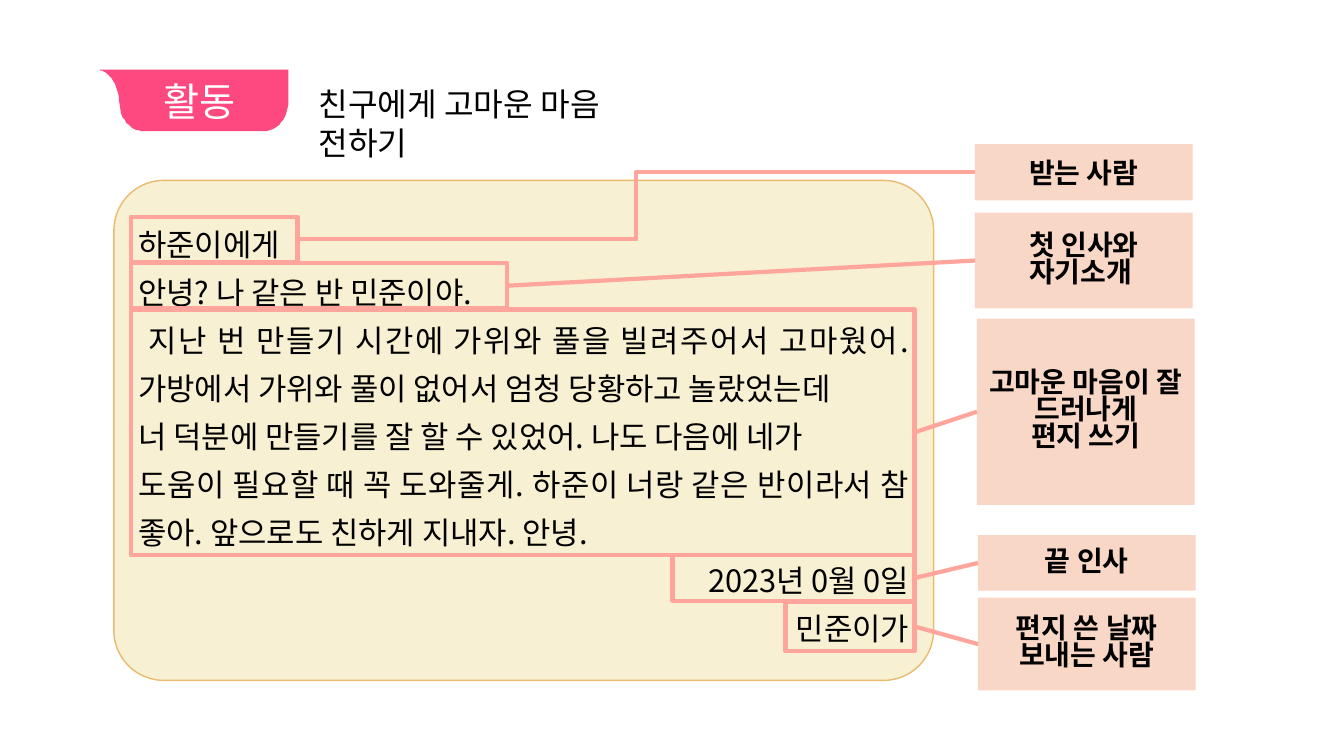
from lxml import etree
from pptx import Presentation
from pptx.dml.color import RGBColor
from pptx.enum.shapes import MSO_CONNECTOR as LINK, MSO_SHAPE as SHAPE
from pptx.enum.text import MSO_ANCHOR as ANCHOR, PP_ALIGN as ALIGN
from pptx.oxml.ns import qn
from pptx.util import Pt

PX = 9144  # 100 px to the inch
PINK = RGBColor(0xFD, 0x48, 0x80)
CREAM = RGBColor(0xF8, 0xF0, 0xD2)
GOLD = RGBColor(0xEB, 0xBA, 0x6F)
PEACH = RGBColor(0xF8, 0xD7, 0xC6)
CORAL = RGBColor(0xFF, 0xA5, 0x9B)
WHITE = RGBColor(0xFF, 0xFF, 0xFF)
BLACK = RGBColor(0, 0, 0)
KOREAN = "Noto Sans CJK KR"
LATIN = "Calibri"

LETTER = [
    ("하준이에게", ALIGN.JUSTIFY),
    ("안녕? 나 같은 반 민준이야. ", ALIGN.JUSTIFY),
    (" 지난 번 만들기 시간에 가위와 풀을 빌려주어서 고마웠어. "
     "가방에서 가위와 풀이 없어서 엄청 당황하고 놀랐었는데", ALIGN.JUSTIFY),
    ("너 덕분에 만들기를 잘 할 수 있었어. 나도 다음에 네가", ALIGN.JUSTIFY),
    ("도움이 필요할 때 꼭 도와줄게. 하준이 너랑 같은 반이라서 "
     "참 좋아. 앞으로도 친하게 지내자. 안녕.", ALIGN.JUSTIFY),
    ("2023년 0월 0일", ALIGN.RIGHT),
    ("민준이가", ALIGN.RIGHT),
]

# Label paragraphs, line spacing, label box, frame around the letter part, link
PARTS = [
    (["받는 사람"], 1.0, (967, 143, 216, 56), (130, 215, 165, 45), LINK.ELBOW),
    (["첫 인사와\n자기소개 "], 0.8, (967, 211, 216, 95), (130, 261, 373, 45),
     LINK.STRAIGHT),
    (["고마운 마음이 잘 드러나게", "편지 쓰기"], 0.8, (969, 316, 216, 185),
     (130, 307, 777, 244), LINK.STRAIGHT),
    (["끝 인사"], 0.8, (970, 531, 216, 55), (667, 551, 240, 45), LINK.STRAIGHT),
    (["편지 쓴 날짜", "보내는 사람"], 0.8, (970, 593, 216, 92),
     (779, 597, 128, 49), LINK.STRAIGHT),
]


def emu(lengths):
    return [round(length * PX) for length in lengths]


def write(frame, paragraphs, size, font, color=BLACK, bold=False, spacing=None):
    """Fill a text frame with (text, alignment) paragraphs."""
    frame.word_wrap = True
    for index, (text, align) in enumerate(paragraphs):
        para = frame.paragraphs[0] if index == 0 else frame.add_paragraph()
        para.alignment = align
        para.line_spacing = spacing
        for number, line in enumerate(text.split("\n")):
            if number:
                para.add_line_break()
            run = para.add_run()
            run.text = line
            run.font.name = font
            run.font.size = Pt(size)
            run.font.bold = bold
            run.font.color.rgb = color


def add_box(slide, kind, box, fill=None, line=None, width=1):
    shape = slide.shapes.add_shape(kind, *emu(box))
    shape.shadow.inherit = False
    if fill is None:
        shape.fill.background()
    else:
        shape.fill.solid()
        shape.fill.fore_color.rgb = fill
    if line is None:
        shape.line.fill.background()
    else:
        shape.line.color.rgb = line
        shape.line.width = Pt(width)
    shape.text_frame.vertical_anchor = ANCHOR.MIDDLE
    return shape


def add_link(slide, kind, frame, label):
    """Join the right side of a frame to the left side of its label."""
    ends = (frame.left + frame.width, frame.top + frame.height // 2,
            label.left, label.top + label.height // 2)
    link = slide.shapes.add_connector(kind, *ends)
    link.begin_connect(frame, 3)
    link.end_connect(label, 1)
    link.line.color.rgb = CORAL
    link.line.width = Pt(3)
    etree.SubElement(link._element.spPr, qn("a:effectLst"))


def curve(start, first, second, end, steps=12):
    """Points of a cubic curve, without its start."""
    for step in range(1, steps + 1):
        t = step / steps
        u = 1 - t
        yield tuple(u**3 * a + 3 * u * u * t * b + 3 * u * t * t * c + t**3 * d
                    for a, b, c, d in zip(start, first, second, end))


def add_ribbon(slide):
    points = [(286, 69), (286, 100),
              *curve((286, 100), (286, 117), (275, 130), (262, 130)),
              (142, 130),
              *curve((142, 130), (132, 130), (124, 123), (120, 112)),
              (118, 99),
              *curve((118, 99), (117, 85), (110, 73), (101, 70)),
              (99, 70)]
    outline = slide.shapes.build_freeform(99, 69, scale=PX)
    outline.add_line_segments(points, close=True)
    ribbon = outline.convert_to_shape()
    ribbon.shadow.inherit = False
    ribbon.fill.solid()
    ribbon.fill.fore_color.rgb = PINK
    ribbon.line.fill.background()

    caption = slide.shapes.add_textbox(*emu((138, 72, 120, 57)))
    write(caption.text_frame, [("활동", ALIGN.CENTER)], 28, LATIN, WHITE)


def add_title(slide):
    title = slide.shapes.title
    title.left, title.top, title.width, title.height = emu((306, 79, 390, 49))
    title.text_frame.vertical_anchor = ANCHOR.TOP
    write(title.text_frame, [("친구에게 고마운 마음 전하기", ALIGN.LEFT)], 23, LATIN)


def add_letter(slide):
    letter = add_box(slide, SHAPE.ROUNDED_RECTANGLE, (113, 179, 813, 496),
                     CREAM, GOLD)
    letter.adjustments[0] = 0.1
    write(letter.text_frame, LETTER, 22, KOREAN, spacing=1.3)


def add_part(slide, paragraphs, spacing, label_box, frame_box, kind):
    label = add_box(slide, SHAPE.RECTANGLE, label_box, PEACH)
    write(label.text_frame, [(text, ALIGN.CENTER) for text in paragraphs],
          20, KOREAN, bold=True, spacing=spacing)
    frame = add_box(slide, SHAPE.RECTANGLE, frame_box, line=CORAL, width=3)
    add_link(slide, kind, frame, label)


def main():
    deck = Presentation()
    deck.slide_width, deck.slide_height = emu((1333, 750))
    slide = deck.slides.add_slide(deck.slide_layouts[5])

    # Heading
    add_ribbon(slide)
    add_title(slide)

    # Letter and the labels of its parts
    add_letter(slide)
    for part in PARTS:
        add_part(slide, *part)

    deck.save("out.pptx")


if __name__ == "__main__":
    main()
